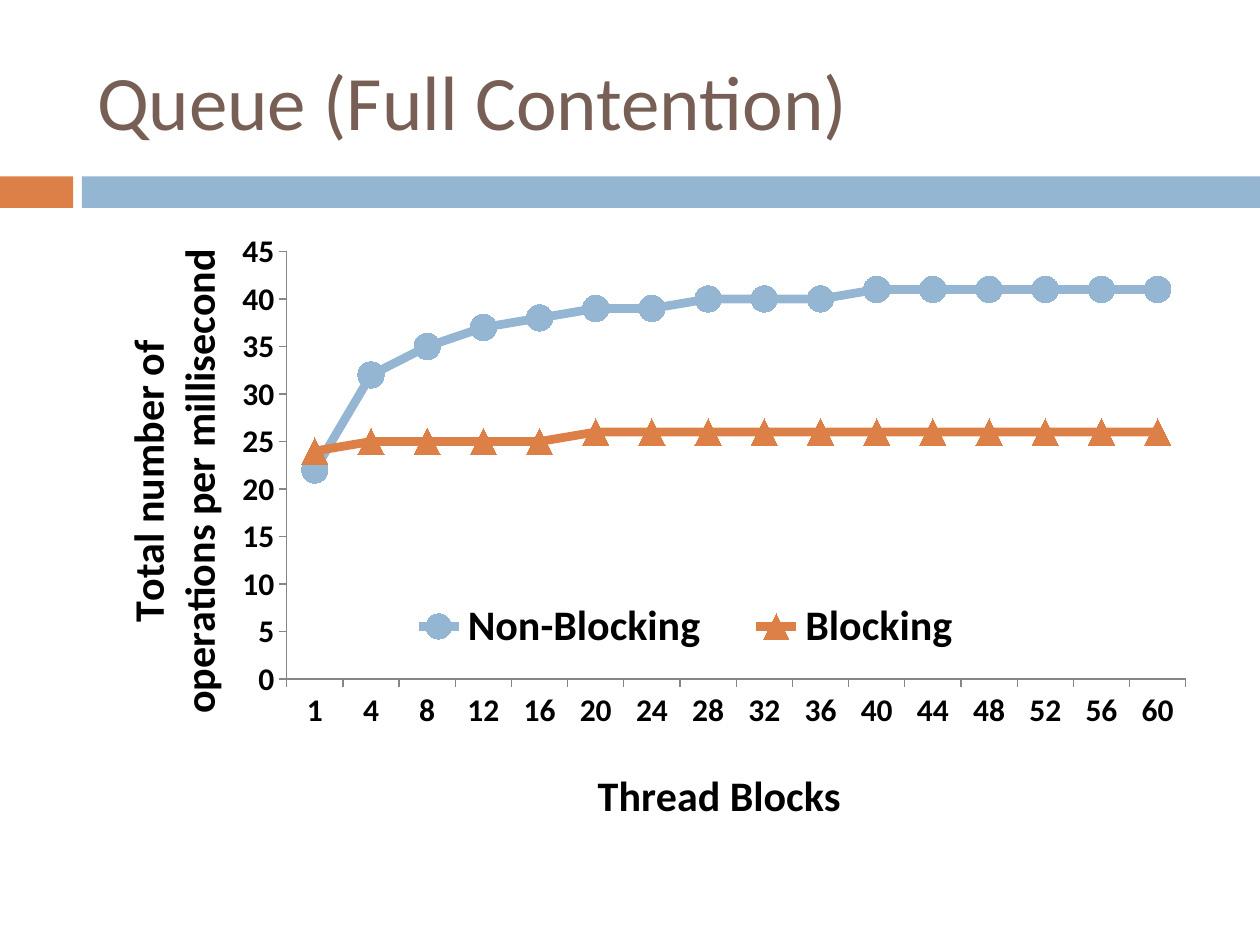
import pptx
import pptx.chart.data
import pptx.dml.color
import pptx.enum.chart
import pptx.enum.shapes
import pptx.enum.text
import pptx.oxml
import pptx.oxml.ns
import pptx.util
from pptx.util import Inches

BLUE = pptx.dml.color.RGBColor(0x94, 0xB6, 0xD2)
ORANGE = pptx.dml.color.RGBColor(0xDD, 0x80, 0x47)
BROWN = pptx.dml.color.RGBColor(0x77, 0x5F, 0x55)
GREY = pptx.dml.color.RGBColor(0x86, 0x86, 0x86)
BLACK = pptx.dml.color.RGBColor(0, 0, 0)
FONT = "Calibri"


def style_font(font, size, color=BLACK, bold=True):
    font.name = FONT
    font.size = pptx.util.Pt(size)
    font.bold = bold
    font.color.rgb = color


def place_chart_part(element, index, **fractions):
    """Give a chart part a manual layout, in fractions of the chart area."""
    for old in element.findall(pptx.oxml.ns.qn("c:layout")):
        element.remove(old)
    target = '<c:layoutTarget val="inner"/>' if element.tag.endswith("plotArea") else ""
    modes = '<c:xMode val="edge"/><c:yMode val="edge"/>'
    values = "".join(f'<c:{key} val="{value}"/>' for key, value in fractions.items())
    element.insert(index, pptx.oxml.parse_xml(
        f'<c:layout {pptx.oxml.ns.nsdecls("c")}><c:manualLayout>'
        f"{target}{modes}{values}</c:manualLayout></c:layout>"))


deck = pptx.Presentation()
deck.slide_width, deck.slide_height = Inches(10), Inches(7.5)
page = deck.slides.add_slide(deck.slide_layouts[5])

# Two-colour band under the title
for left, width, color in [(0, 0.58, ORANGE), (0.65, 9.35, BLUE)]:
    band = page.shapes.add_shape(
        pptx.enum.shapes.MSO_SHAPE.RECTANGLE,
        Inches(left), Inches(1.4), Inches(width), Inches(0.25))
    band.shadow.inherit = False
    band.fill.solid()
    band.fill.fore_color.rgb = color
    band.line.fill.background()

title = page.shapes.title
title.left, title.top = Inches(0.67), Inches(0.25)
title.width, title.height = Inches(8.92), Inches(1.08)
title.text_frame.text = "Queue (Full Contention)"
title.text_frame.vertical_anchor = pptx.enum.text.MSO_ANCHOR.MIDDLE
para = title.text_frame.paragraphs[0]
para.alignment = pptx.enum.text.PP_ALIGN.LEFT
style_font(para.runs[0].font, 44, BROWN, bold=False)

# Throughput by number of thread blocks
data = pptx.chart.data.CategoryChartData()
data.categories = ["1"] + [str(blocks) for blocks in range(4, 61, 4)]
data.add_series("Non-Blocking",
                [22, 32, 35, 37, 38, 39, 39, 40, 40, 40, 41, 41, 41, 41, 41, 41])
data.add_series("Blocking", [24] + [25] * 4 + [26] * 11)
chart = page.shapes.add_chart(
    pptx.enum.chart.XL_CHART_TYPE.LINE_MARKERS,
    Inches(0.67), Inches(1.75), Inches(8.92), Inches(4.92), data).chart
chart.has_title = False
style_font(chart.font, 10, bold=False)
plot = chart.plots[0]
plot.vary_by_categories = False
place_chart_part(chart.element.find(".//" + pptx.oxml.ns.qn("c:plotArea")), 0,
                 x=0.18, y=0.05, w=0.8, h=0.69)

marker_styles = pptx.enum.chart.XL_MARKER_STYLE
for series, color, marker in zip(plot.series, (BLUE, ORANGE),
                                 (marker_styles.CIRCLE, marker_styles.TRIANGLE)):
    series.smooth = False
    series.format.line.color.rgb = color
    series.format.line.width = pptx.util.Pt(5)
    series.marker.style = marker
    series.marker.size = 15
    series.marker.format.fill.solid()
    series.marker.format.fill.fore_color.rgb = color
    series.marker.format.line.fill.background()

axes = [
    (chart.category_axis, "Thread Blocks", 0.45, 0.87),
    (chart.value_axis, "Total number of\noperations per millisecond", 0.03, 0.04),
]
for axis, caption, x, y in axes:
    axis.has_major_gridlines = False
    axis.major_tick_mark = pptx.enum.chart.XL_TICK_MARK.OUTSIDE
    axis.minor_tick_mark = pptx.enum.chart.XL_TICK_MARK.NONE
    axis.format.line.color.rgb = GREY
    style_font(axis.tick_labels.font, 18)
    frame = axis.axis_title.text_frame
    frame.text = caption
    for para in frame.paragraphs:
        style_font(para.runs[0].font, 24)
    place_chart_part(axis.axis_title._element, 1, x=x, y=y)
chart.value_axis.axis_title.text_frame._txBody.bodyPr.set("rot", "-5400000")
chart.value_axis.minimum_scale = 0
chart.value_axis.maximum_scale = 45
chart.value_axis.major_unit = 5

chart.has_legend = True
chart.legend.position = pptx.enum.chart.XL_LEGEND_POSITION.LEFT
chart.legend.include_in_layout = True
style_font(chart.legend.font, 24)
place_chart_part(chart.legend._element, 1, x=0.26, y=0.61, w=0.55, h=0.09)

deck.save("out.pptx")
